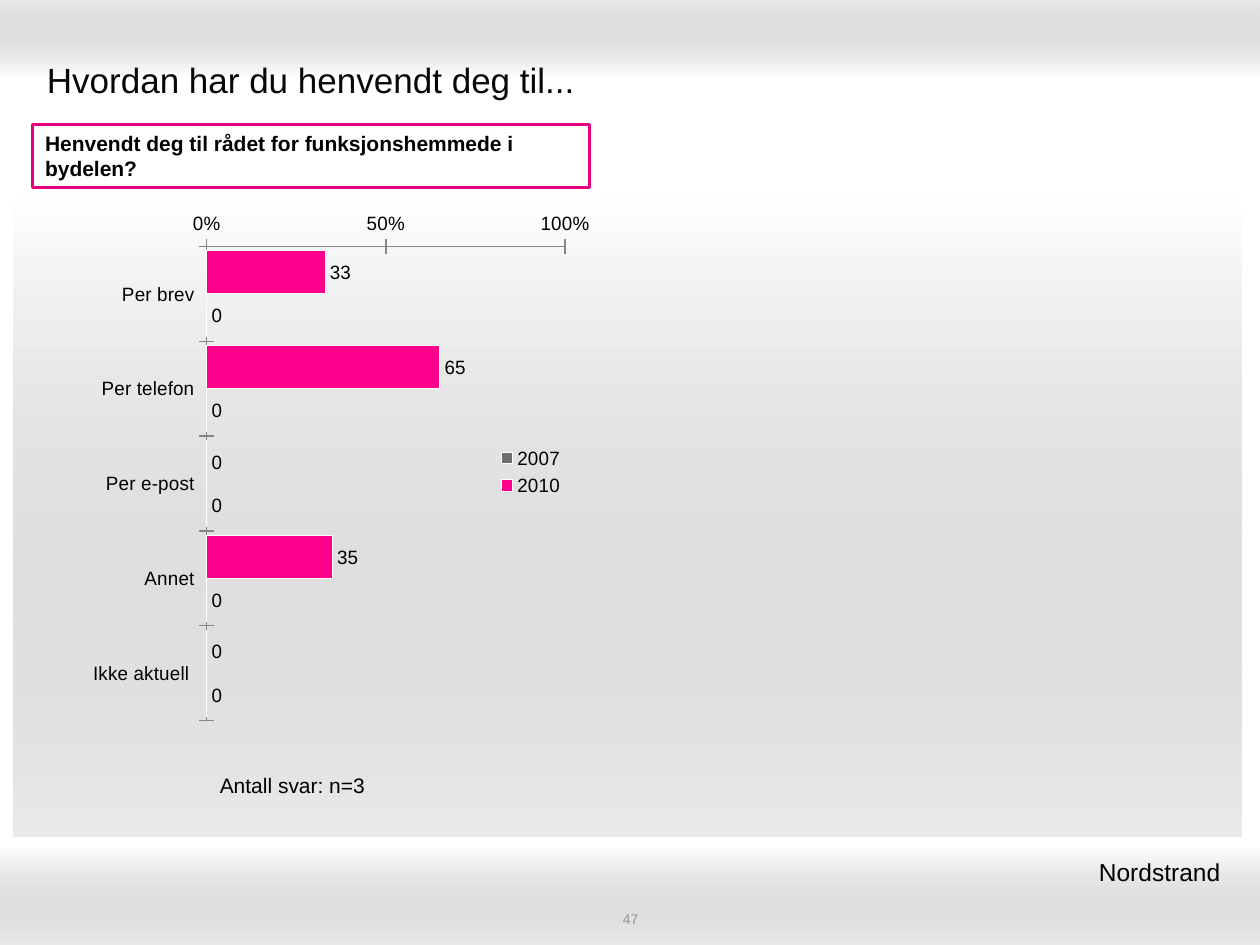
from typing import Any, NamedTuple

from lxml import etree
from pptx import Presentation
from pptx.chart.data import CategoryChartData
from pptx.dml.color import RGBColor
from pptx.enum.chart import XL_CHART_TYPE, XL_LABEL_POSITION, XL_LEGEND_POSITION, XL_TICK_MARK
from pptx.enum.shapes import MSO_SHAPE
from pptx.enum.text import MSO_ANCHOR, PP_ALIGN
from pptx.oxml import parse_xml
from pptx.oxml.ns import nsdecls, qn
from pptx.util import Cm, Pt

RECT = MSO_SHAPE.RECTANGLE
BARS = XL_CHART_TYPE.BAR_CLUSTERED
CROSS = XL_TICK_MARK.CROSS
OUTER = XL_LABEL_POSITION.OUTSIDE_END
EAST = XL_LEGEND_POSITION.RIGHT
TOP, MID = MSO_ANCHOR.TOP, MSO_ANCHOR.MIDDLE
LEFT, MIDST, RIGHT = PP_ALIGN.LEFT, PP_ALIGN.CENTER, PP_ALIGN.RIGHT
FACE = "Arial"
PLAIN = "{2D5ABB26-0587-4C30-8999-92F81FD0307C}"
PLOT = {"x": 0.32, "y": 0.065, "w": 0.659, "h": 0.916}


class Area(NamedTuple):
    x: float
    y: float
    w: float
    h: float

    def spans(self) -> list[Cm]:
        return [Cm(size) for size in self]


class Band(NamedTuple):
    area: Area
    angle: int


class Style(NamedTuple):
    size: int
    color: str = "000000"
    bold: bool = False
    align: PP_ALIGN = LEFT
    anchor: MSO_ANCHOR = TOP


class Row(NamedTuple):
    name: str
    color: str
    vals: tuple[int, ...]


BANDS = [
    Band(Area(0, 0, 25.4, 1.57), 90),
    Band(Area(0, 17.07, 25.4, 1.98), 270),
    Band(Area(0.28, 3.96, 24.74, 12.9), 270),
]
CATS = ["Per brev", "Per telefon", "Per e-post", "Annet", "Ikke aktuell "]
ROWS = [
    Row("2010", "FF008C", (33, 65, 0, 35, 0)),
    Row("2007", "6E6E6E", (0, 0, 0, 0, 0)),
]


def tint(code: str) -> RGBColor:
    return RGBColor.from_string(code)


def apply(item: Any, traits: dict[str, Any]) -> None:
    for name, value in traits.items():
        setattr(item, name, value)


def write(frame: Any, text: str, style: Style) -> None:
    frame.text = text
    para = frame.paragraphs[0]
    para.alignment = style.align
    font = para.runs[0].font
    apply(font, {"name": FACE, "size": Pt(style.size), "bold": style.bold})
    font.color.rgb = tint(style.color)


def label(slide: Any, area: Area, text: str, style: Style) -> None:
    frame = slide.shapes.add_textbox(*area.spans()).text_frame
    apply(frame, {"word_wrap": True, "vertical_anchor": style.anchor})
    write(frame, text, style)


def draw_band(slide: Any, band: Band) -> None:
    shape = slide.shapes.add_shape(RECT, *band.area.spans())
    shape.shadow.inherit = False
    shape.line.fill.background()
    shape.fill.gradient()
    shape.fill.gradient_angle = band.angle
    for stop, code in zip(shape.fill.gradient_stops, ("FFFFFF", "999999")):
        stop.color.rgb = tint(code)
    color = shape.element.findall(".//" + qn("a:srgbClr"))[-1]
    etree.SubElement(color, qn("a:alpha"), val="20000")


def draw_title(slide: Any, area: Area, text: str, style: Style) -> None:
    title = slide.shapes.title
    apply(title, dict(zip(("left", "top", "width", "height"), area.spans())))
    title.text_frame.vertical_anchor = style.anchor
    write(title.text_frame, text, style)
    slide.shapes.element.append(title.element)


def draw_box(slide: Any, area: Area, text: str, style: Style) -> None:
    box = slide.shapes.add_shape(RECT, *area.spans())
    box.shadow.inherit = False
    box.fill.solid()
    box.fill.fore_color.rgb = tint("FFFFFF")
    box.line.color.rgb = tint("E7007E")
    box.line.width = Pt(2)
    apply(box.text_frame, {"word_wrap": True, "vertical_anchor": style.anchor})
    write(box.text_frame, text, style)


def draw_chart(slide: Any, area: Area) -> None:
    data = CategoryChartData(number_format="0")
    data.categories = CATS
    for row in ROWS:
        data.add_series(row.name, row.vals)
    chart = slide.shapes.add_chart(BARS, *area.spans(), data).chart
    apply(chart, {"has_title": False, "has_legend": True})
    apply(chart.font, {"name": FACE, "size": Pt(11)})
    chart.font.color.rgb = tint("000000")
    apply(chart.legend, {"position": EAST, "include_in_layout": True})

    cat, val = chart.category_axis, chart.value_axis
    cat.reverse_order = True
    apply(val, {"minimum_scale": 0, "maximum_scale": 100, "major_unit": 50})
    apply(val.tick_labels, {"number_format": r"General\%", "number_format_is_linked": False})
    for axis in (cat, val):
        apply(axis, {"major_tick_mark": CROSS, "has_major_gridlines": False})
        axis.format.line.color.rgb = tint("868686")

    plot = chart.plots[0]
    apply(plot, {"gap_width": 20, "overlap": 0, "vary_by_categories": False})
    for series, row in zip(plot.series, ROWS):
        series.format.fill.solid()
        series.format.fill.fore_color.rgb = tint(row.color)
        series.format.line.color.rgb = tint("FFFFFF")
        apply(series.data_labels, {
            "show_value": True, "position": OUTER,
            "number_format": "0", "number_format_is_linked": False,
        })

    modes = "".join(f'<c:{key}Mode val="edge"/>' for key in "xy")
    sizes = "".join(f'<c:{key} val="{size}"/>' for key, size in PLOT.items())
    space = chart.element.find(".//" + qn("c:plotArea"))
    for old in space.findall(qn("c:layout")):
        space.remove(old)
    space.insert(0, parse_xml(
        f'<c:layout {nsdecls("c")}><c:manualLayout><c:layoutTarget val="inner"/>'
        f"{modes}{sizes}</c:manualLayout></c:layout>"
    ))


def draw_table(slide: Any, area: Area, text: str, style: Style) -> None:
    frame = slide.shapes.add_table(1, 1, *area.spans())
    table = frame.table
    apply(table, {"first_row": False, "horz_banding": False})
    frame.element.find(".//" + qn("a:tableStyleId")).text = PLAIN
    cell = table.cell(0, 0)
    cell.fill.background()
    cell.vertical_anchor = style.anchor
    write(cell.text_frame, text, style)


def main() -> None:
    deck = Presentation()
    apply(deck, {"slide_width": Cm(25.4), "slide_height": Cm(19.05)})
    slide = deck.slides.add_slide(deck.slide_layouts[5])
    for band in BANDS:
        draw_band(slide, band)
    draw_chart(slide, Area(0.66, 4.27, 11.23, 10.46))
    draw_title(slide, Area(0.69, 0.91, 24, 1.4), "Hvordan har du henvendt deg til...",
               Style(20, "080808", anchor=MID))
    label(slide, Area(8.69, 18.34, 8.05, 0.36), "47", Style(8, "969696", align=MIDST, anchor=MID))
    draw_box(slide, Area(0.66, 2.51, 11.23, 1.27),
             "Henvendt deg til rådet for funksjonshemmede i bydelen?", Style(12, bold=True))
    draw_table(slide, Area(4.09, 15.32, 3.61, 1.07), "Antall svar: n=3",
               Style(12, align=MIDST, anchor=MID))
    label(slide, Area(15.49, 17.15, 9.5, 1.45), "Nordstrand ", Style(14, align=RIGHT))
    deck.save("out.pptx")


if __name__ == "__main__":
    main()
